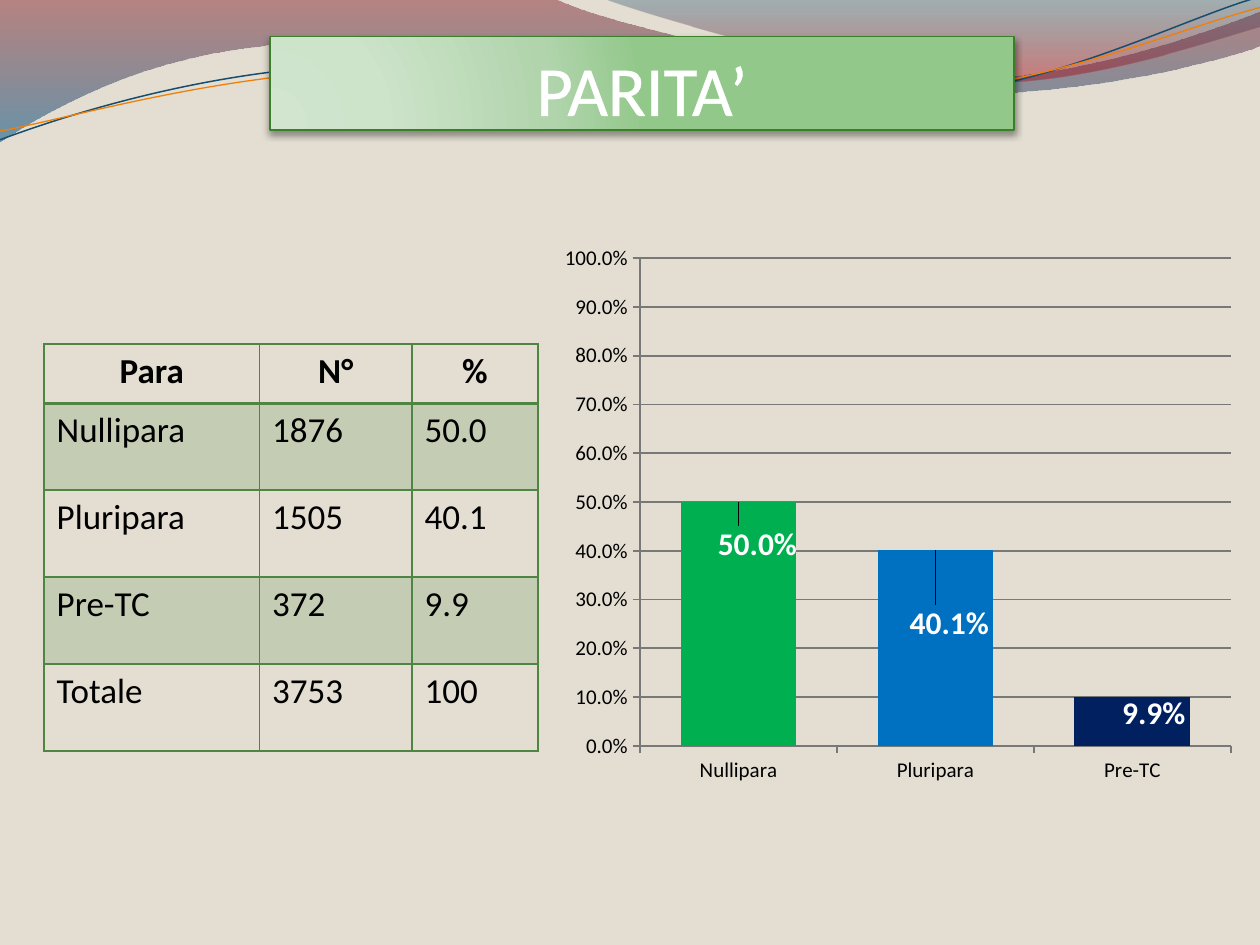
import pptx
import pptx.chart.data
import pptx.dml.color
import pptx.enum.chart
import pptx.enum.shapes
import pptx.enum.text
import pptx.oxml
import pptx.oxml.ns
import pptx.util

Inches, Pt = pptx.util.Inches, pptx.util.Pt
RGBColor, qn = pptx.dml.color.RGBColor, pptx.oxml.ns.qn
PP_ALIGN = pptx.enum.text.PP_ALIGN
NS = pptx.oxml.ns.nsdecls("a")
C_NS = pptx.oxml.ns.nsdecls("c")

SAND = RGBColor(0xE3, 0xDE, 0xD1)
NAVY_LINE = RGBColor(0x18, 0x4E, 0x6D)
ORANGE = RGBColor(0xF0, 0x7F, 0x09)
TITLE_EDGE = RGBColor(0x3A, 0x80, 0x2A)
TABLE_GREEN = RGBColor(0x4E, 0x85, 0x42)
GRID_GRAY = RGBColor(0x78, 0x78, 0x78)
BLACK = RGBColor(0, 0, 0)
WHITE = RGBColor(0xFF, 0xFF, 0xFF)
BAR_COLORS = [RGBColor(0x00, 0xB0, 0x50), RGBColor(0x00, 0x70, 0xC0), RGBColor(0x00, 0x20, 0x60)]


def write_text(frame, text, size=20, color=BLACK, bold=False, align=PP_ALIGN.LEFT):
    paragraph = frame.paragraphs[0]
    paragraph.alignment = align
    run = paragraph.add_run()
    run.text = text
    run.font.name, run.font.size = "Calibri", Pt(size)
    run.font.bold, run.font.color.rgb = bold, color
    return run


def trace(shapes, start, segments, close):
    """Outline in inches: a segment is a line end (2 numbers) or a Bezier (6 numbers)."""
    builder = shapes.build_freeform(Inches(start[0]), Inches(start[1]), scale=1.0)
    for seg in segments:
        builder.add_line_segments([(Inches(x), Inches(y)) for x, y in zip(seg[::2], seg[1::2])],
                                  close=False)
    if close:
        builder.add_line_segments([], close=True)
    outline = builder.convert_to_shape()
    outline.shadow.inherit = False
    # Join the three points of each Bezier into one curve
    steps = iter(list(outline._element.iter(qn("a:lnTo"))))
    for seg in segments:
        group = [next(steps) for _ in range(len(seg) // 2)]
        if len(group) == 3:
            curve = pptx.oxml.parse_xml(f"<a:cubicBezTo {NS}/>")
            group[0].addprevious(curve)
            for step in group:
                curve.append(step[0])
                step.getparent().remove(step)
    return outline


prs = pptx.Presentation()
prs.slide_width, prs.slide_height = Inches(10), Inches(7.5)
slide = prs.slides.add_slide(prs.slide_layouts[6])
slide.background.fill.solid()
slide.background.fill.fore_color.rgb = SAND

# Wave bands across the top
left_wave = trace(slide.shapes, (0, -0.01), [
    (4.4, -0.01), (4.76, 0.17, 6.64, 0.63, 7.58, 0.63), (8.53, 0.63, 9.58, 0.26, 10, 0.09),
    (10.01, 0.36), (9.83, 0.44, 8.7, 0.76, 7.46, 0.75), (6.22, 0.75, 3.82, 0.28, 2.57, 0.34),
    (1.29, 0.35, 0.46, 0.83, -0.01, 1.13), (0, -0.01)], True)
right_wave = trace(slide.shapes, (4.79, -0.01), [
    (5.09, 0.11, 6.82, 0.62, 7.69, 0.65), (8.56, 0.69, 9.61, 0.32, 10, 0.21), (10, 0),
    (4.79, -0.01)], True)
for wave in (left_wave, right_wave):
    wave.line.fill.background()

# Thin wave lines
wave_lines = [
    (NAVY_LINE, 0.85, (0, 1.11), [(0.48, 0.93, 1.58, 0.57, 2.77, 0.52),
     (3.95, 0.47, 5.93, 0.89, 7.13, 0.8), (8.33, 0.71, 9.38, 0.15, 9.98, -0.02)]),
    (ORANGE, 0.75, (0, 1.04), [(0.47, 0.96, 1.64, 0.61, 2.83, 0.56),
     (4.03, 0.51, 5.97, 0.83, 7.17, 0.75), (8.36, 0.67, 9.41, 0.21, 10, 0.06)]),
]
for color, width, start, curves in wave_lines:
    strand = trace(slide.shapes, start, curves, False)
    strand.fill.background()
    strand.line.color.rgb, strand.line.width = color, Pt(width)

# Parity table
rows = [("Para", "N°", "%"), ("Nullipara", "1876", "50.0"), ("Pluripara", "1505", "40.1"),
        ("Pre-TC", "372", "9.9"), ("Totale", "3753", "100")]
parity = slide.shapes.add_table(5, 3, Inches(0.35), Inches(2.73), Inches(3.92), Inches(3.23)).table
parity.first_row = parity.horz_banding = False
for column, width in zip(parity.columns, (1.71, 1.21, 1)):
    column.width = Inches(width)
for r, values in enumerate(rows):
    header = r == 0
    parity.rows[r].height = Inches(0.47 if header else 0.69)
    for c, value in enumerate(values):
        cell = parity.cell(r, c)
        write_text(cell.text_frame, value, bold=header,
                   align=PP_ALIGN.CENTER if header else PP_ALIGN.LEFT)
        tc_pr = cell._tc.get_or_add_tcPr()
        if r % 2:
            cell.fill.solid()
            cell.fill.fore_color.rgb = TABLE_GREEN
            tc_pr.find(".//" + qn("a:srgbClr")).append(
                pptx.oxml.parse_xml(f'<a:alpha {NS} val="20000"/>'))
        else:
            cell.fill.background()
        for i, side in enumerate(("lnL", "lnR", "lnT", "lnB")):
            heavy = (header and side == "lnB") or (r == 1 and side == "lnT")
            tc_pr.insert(i, pptx.oxml.parse_xml(
                f'<a:{side} {NS} w="{Pt(2 if heavy else 1)}"><a:solidFill>'
                f'<a:srgbClr val="{TABLE_GREEN}"/></a:solidFill></a:{side}>'))

# Title banner
title = slide.shapes.add_shape(pptx.enum.shapes.MSO_SHAPE.RECTANGLE,
                               Inches(2.14), Inches(0.29), Inches(5.91), Inches(0.74))
title.line.color.rgb, title.line.width = TITLE_EDGE, Pt(1)
title.shadow.inherit = False
title._element.spPr.find(qn("a:effectLst")).append(pptx.oxml.parse_xml(
    f'<a:outerShdw {NS} blurRad="{Pt(4)}" dist="{Pt(2)}" dir="5400000" rotWithShape="0">'
    '<a:srgbClr val="000000"><a:alpha val="40000"/></a:srgbClr></a:outerShdw>'))
frame = title.text_frame
frame.word_wrap = True
frame.vertical_anchor = pptx.enum.text.MSO_ANCHOR.BOTTOM
frame.margin_left = frame.margin_right = frame.margin_bottom = 0
frame.margin_top = Inches(0.05)
heading = write_text(frame, "PARITA’", size=40, color=WHITE, align=PP_ALIGN.CENTER)
heading._r.get_or_add_rPr().insert(0, pptx.oxml.parse_xml(
    f'<a:ln {NS} w="{Pt(1.45)}"><a:solidFill><a:srgbClr val="{WHITE}"/></a:solidFill></a:ln>'))

# Gradient fills: stops are (position %, colour, opacity %)
downward = '<a:lin ang="5400000" scaled="0"/>'
radial = '<a:path path="circle"><a:fillToRect l="5000" t="100000" r="120000" b="10000"/></a:path>'
gradients = [
    (left_wave, downward, [(0, "7E1621", 45), (100, "005689", 55)]),
    (right_wave, downward, [(0, "094467", 30), (80, "A10F1F", 45)]),
    (title, radial, [(0, "D1E5CF", 100), (30, "CDE3CA", 100), (75, "B1D4AC", 100),
                     (100, "93C88B", 100)]),
]
for part, direction, stops in gradients:
    part.fill.background()
    stop_xml = "".join(f'<a:gs pos="{pos * 1000}"><a:srgbClr val="{color}">'
                       f'<a:alpha val="{opacity * 1000}"/></a:srgbClr></a:gs>'
                       for pos, color, opacity in stops)
    sp_pr = part._element.spPr
    sp_pr.replace(sp_pr.find(qn("a:noFill")), pptx.oxml.parse_xml(
        f'<a:gradFill {NS} rotWithShape="1"><a:gsLst>{stop_xml}</a:gsLst>{direction}</a:gradFill>'))

# Parity chart
chart_w, chart_h = 5.51, 4.44
shares = pptx.chart.data.CategoryChartData(number_format="0.0%")
shares.categories = ["Nullipara", "Pluripara", "Pre-TC"]
shares.add_series("Series 1", (0.5, 0.401, 0.099))
chart = slide.shapes.add_chart(pptx.enum.chart.XL_CHART_TYPE.COLUMN_CLUSTERED, Inches(4.37),
                               Inches(1.86), Inches(chart_w), Inches(chart_h), shares).chart
chart.has_legend = chart.has_title = False
chart.font.name, chart.font.size, chart.font.color.rgb = "Cambria", Pt(18), BLACK
scale = chart.value_axis
for axis in (chart.category_axis, scale):
    axis.tick_labels.font.name, axis.tick_labels.font.size = "Calibri", Pt(12)
    axis.major_tick_mark = pptx.enum.chart.XL_TICK_MARK.OUTSIDE
scale.minimum_scale, scale.maximum_scale, scale.major_unit = 0, 1, 0.1
scale.tick_labels.number_format, scale.tick_labels.number_format_is_linked = "0.0%", False
for ruled in (chart.category_axis, scale, scale.major_gridlines):
    ruled.format.line.color.rgb, ruled.format.line.width = GRID_GRAY, Pt(1)

plot_area = chart._chartSpace.chart.plotArea
for old_layout in plot_area.findall(qn("c:layout")):
    plot_area.remove(old_layout)
plot_area.insert(0, pptx.oxml.parse_xml(
    f'<c:layout {C_NS}><c:manualLayout><c:layoutTarget val="inner"/><c:xMode val="edge"/>'
    f'<c:yMode val="edge"/><c:x val="{0.71 / chart_w}"/><c:y val="{0.19 / chart_h}"/>'
    f'<c:w val="{4.69 / chart_w}"/><c:h val="{3.87 / chart_h}"/></c:manualLayout></c:layout>'))

# Bar colours and labels moved down into the bars (shifts in inches)
plot = chart.plots[0]
plot.gap_width, plot.vary_by_categories = 70, False
bars = plot.series[0]
bars.format.fill.solid()
bars.format.fill.fore_color.rgb = ORANGE
labels = bars.data_labels
labels.show_value = True
labels.number_format, labels.number_format_is_linked = "0.0%", False
labels.font.name, labels.font.bold = "Calibri", True
for i, (color, (dx, dy)) in enumerate(zip(BAR_COLORS, [(0.15, 0.53), (0.11, 0.77), (0.17, 0.32)])):
    bar = bars.points[i]
    bar.format.fill.solid()
    bar.format.fill.fore_color.rgb = color
    label = bar.data_label
    label.position = pptx.enum.chart.XL_LABEL_POSITION.OUTSIDE_END
    label.font.name, label.font.size = "Calibri", Pt(18)
    label.font.bold, label.font.color.rgb = True, WHITE
    labels._element.findall(qn("c:dLbl"))[i].insert(1, pptx.oxml.parse_xml(
        f'<c:layout {C_NS}><c:manualLayout><c:x val="{dx / chart_w}"/>'
        f'<c:y val="{dy / chart_h}"/></c:manualLayout></c:layout>'))

# No leader lines between bars and labels
for leader in labels._element.findall(qn("c:showLeaderLines")):
    labels._element.remove(leader)
labels._element.append(pptx.oxml.parse_xml(
    f'<c:extLst {C_NS}><c:ext uri="{{CE6537A1-D6FC-4f65-9D91-7224C49458BB}}" '
    'xmlns:c15="http://schemas.microsoft.com/office/drawing/2012/chart">'
    '<c15:showLeaderLines val="0"/></c:ext></c:extLst>'))

prs.save("out.pptx")
